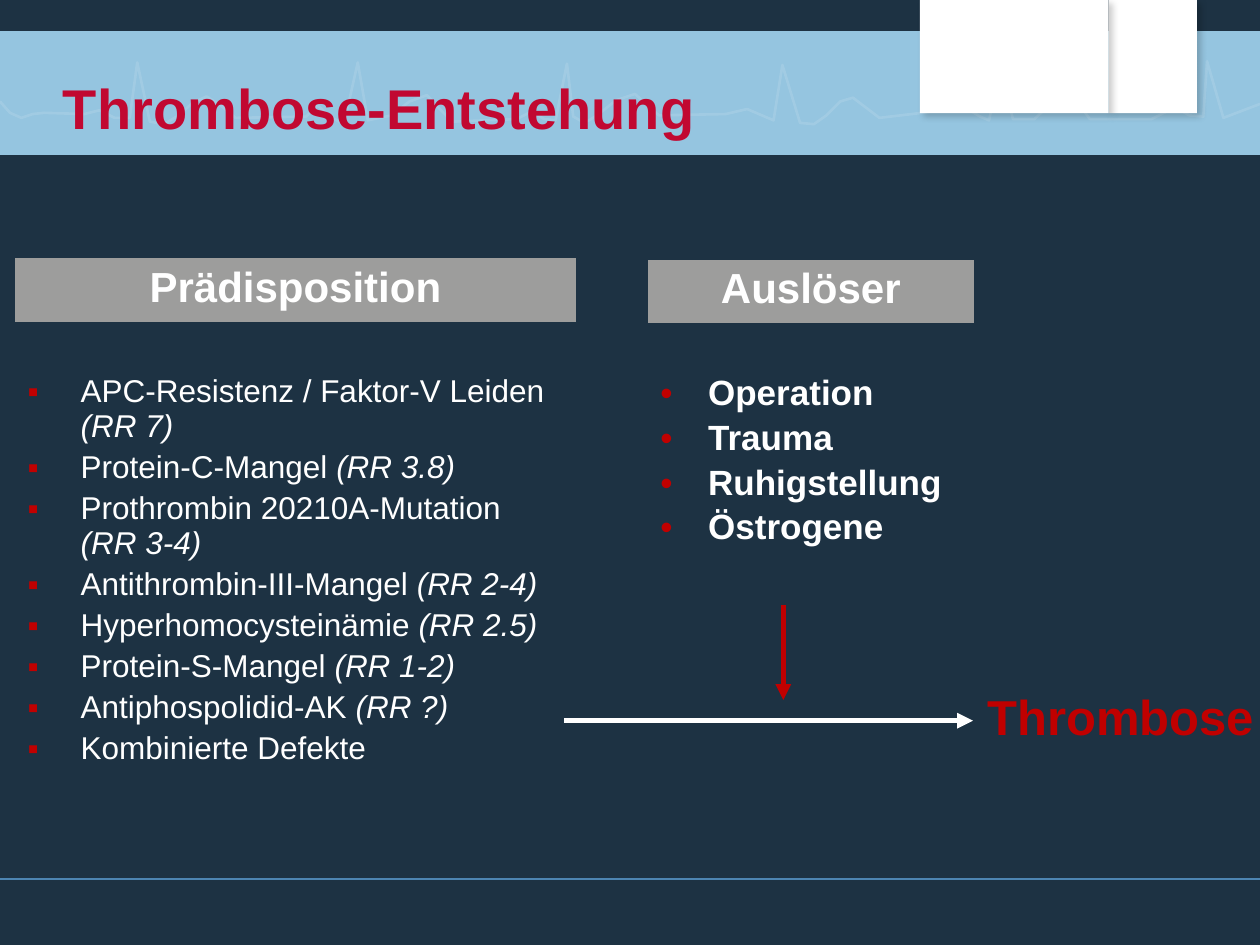
from lxml.etree import SubElement as Sub
from pptx import Presentation
from pptx.dml.color import RGBColor as RGB
from pptx.enum.shapes import MSO_CONNECTOR as Conn, MSO_SHAPE as Kind
from pptx.enum.text import MSO_ANCHOR as Anchor, PP_ALIGN as Align
from pptx.oxml.ns import qn
from pptx.util import Inches, Pt

WIDE, HIGH = Inches(10), Inches(7.5)
NAVY = RGB(0x1D, 0x32, 0x43)
SKY = RGB(0x95, 0xC5, 0xE0)
PALE = RGB(0xBF, 0xDC, 0xEC)
BLUE = RGB(0x4D, 0x85, 0xB2)
CRIMSON = RGB(0xC1, 0x08, 0x31)
RED = RGB(0xC0, 0x00, 0x00)
GREY = RGB(0x9D, 0x9D, 0x9C)
WHITE = RGB(0xFF, 0xFF, 0xFF)
PLAIN = "{2D5ABB26-0587-4C30-8999-92F81FD0307C}"

PULSE = [
    (0, 56), (8, 65), (17, 69), (26, 66), (35, 65), (67, 66), (79, 63),
    (91, 69), (103, 69), (109, 25), (119, 72), (130, 74), (142, 67),
    (153, 57), (164, 52), (175, 59), (187, 69), (243, 68), (252, 59),
    (262, 68), (273, 74), (284, 25), (292, 71), (311, 67), (325, 56),
    (339, 51), (348, 61), (359, 72), (410, 70), (422, 64), (432, 70),
    (441, 71), (450, 26), (455, 68), (464, 73), (474, 67), (489, 55),
    (504, 50), (523, 67), (576, 66), (593, 62), (614, 71), (621, 27),
    (635, 73), (646, 74), (656, 67), (667, 56), (677, 53), (698, 69),
    (766, 61), (778, 68), (785, 71), (794, 29), (804, 70), (821, 70),
    (836, 56), (849, 49), (857, 59), (865, 70), (914, 70), (924, 65),
    (933, 61), (944, 67), (955, 68), (958, 24), (971, 69), (1000, 58),
]
RISKS = [
    ("APC-Resistenz / Faktor-V Leiden ", "(RR 7)"),
    ("Protein-C-Mangel ", "(RR 3.8)"),
    ("Prothrombin 20210A-Mutation ", "(RR 3-4)"),
    ("Antithrombin-III-Mangel ", "(RR 2-4)"),
    ("Hyperhomocysteinämie ", "(RR 2.5)"),
    ("Protein-S-Mangel ", "(RR 1-2)"),
    ("Antiphospolidid-AK ", "(RR ?)"),
    ("Kombinierte Defekte", ""),
]
CAUSES = [(name, "") for name in
          ("Operation", "Trauma", "Ruhigstellung", "Östrogene")]


def part(box, x, y, w, h):
    """Return the part of a box given by shares of its size."""
    left, top, wide, high = box
    return (int(left + x * wide), int(top + y * high),
            int(w * wide), int(h * high))


def style(para, size, color, bold=True):
    """Set the font of a paragraph."""
    font = para.font
    font.name, font.size, font.bold = "Arial", Pt(size), bold
    font.color.rgb = color


def panel(slide, box, fill):
    """Add a plain filled rectangle."""
    shape = slide.shapes.add_shape(Kind.RECTANGLE, *box)
    shape.fill.solid()
    shape.fill.fore_color.rgb = fill
    shape.line.fill.background()
    shape.shadow.inherit = False
    return shape


def card(slide, box):
    """Add a white card with a soft shadow."""
    shape = panel(slide, box, WHITE)
    glow = Sub(shape.element.spPr.find(qn("a:effectLst")), qn("a:outerShdw"),
               blurRad="50800", dist="38100", dir="2700000")
    tint = Sub(glow, qn("a:srgbClr"), val="000000")
    Sub(tint, qn("a:alpha"), val="20000")


def label(slide, box, text, size, color, align, pad=None):
    """Add a text box with one bold line."""
    frame = slide.shapes.add_textbox(*box).text_frame
    frame.word_wrap = True
    if pad is not None:
        frame.margin_left = frame.margin_right = pad
        frame.margin_top = frame.margin_bottom = pad
        frame.vertical_anchor = Anchor.MIDDLE
    para = frame.paragraphs[0]
    para.text, para.alignment = text, align
    style(para, size, color)


def rule(slide, box, color, width, head=True):
    """Add a line across a box, with an arrowhead if wanted."""
    x, y, w, h = box
    line = slide.shapes.add_connector(Conn.STRAIGHT, x, y, x + w, y + h)
    line.line.color.rgb, line.line.width = color, Pt(width)
    if head:
        Sub(line.line._get_or_add_ln(), qn("a:tailEnd"), type="triangle")
    Sub(line.element.spPr, qn("a:effectLst"))


def pulse(slide, box):
    """Draw the faint heartbeat across a band."""
    pen = slide.shapes.build_freeform(*PULSE[0], scale=box[2] / 1000)
    pen.add_line_segments(PULSE[1:], close=False)
    wave = pen.convert_to_shape(box[0], box[1])
    wave.fill.background()
    wave.shadow.inherit = False
    wave.line.color.rgb, wave.line.width = PALE, Pt(1.5)
    tint = wave.line._get_or_add_ln().find(".//" + qn("a:srgbClr"))
    Sub(tint, qn("a:alpha"), val="30000")


def header(slide, box):
    """Place the band, the cards and the title."""
    band = part(box, 0, 0.2, 1, 0.8)
    panel(slide, band, SKY)
    pulse(slide, band)
    card(slide, part(box, 0.88, 0, 0.07, 0.73))
    card(slide, part(box, 0.73, 0, 0.15, 0.73))
    label(slide, part(box, 0.05, 0.47, 0.82, 0.44), "Thrombose-Entstehung",
          32, CRIMSON, Align.LEFT, 0)


def bullet(para, mark, dent):
    """Give a paragraph a red hanging bullet."""
    prop = para._p.get_or_add_pPr()
    prop.set("marL", str(dent))
    prop.set("indent", str(-dent))
    Sub(Sub(prop, qn("a:buClr")), qn("a:srgbClr"), val=str(RED))
    Sub(prop, qn("a:buFont"), typeface="Arial")
    Sub(prop, qn("a:buChar"), char=mark)


def column(slide, box, share, title, items, mark, dent, size, bold):
    """Place a table with a grey head and a list below it."""
    frame = slide.shapes.add_table(2, 1, *box)
    table = frame.table
    table.first_row = table.horz_banding = False
    table._tbl.tblPr.find(qn("a:tableStyleId")).text = PLAIN
    for row, ratio in zip(table.rows, (share, 1 - share)):
        row.height = int(box[3] * ratio)
    head, body = table.cell(0, 0), table.cell(1, 0)
    head.fill.solid()
    head.fill.fore_color.rgb = GREY
    para = head.text_frame.paragraphs[0]
    para.text, para.alignment = title, Align.CENTER
    style(para, 24, WHITE)
    body.fill.background()
    body.margin_top = Inches(0.41)
    text = body.text_frame
    for rank, (name, risk) in enumerate(items):
        para = text.add_paragraph() if rank else text.paragraphs[0]
        bullet(para, mark, dent)
        if rank:
            para.space_before = Pt(3.2)
        style(para, size, WHITE, bold)
        para.add_run().text = name
        if risk:
            run = para.add_run()
            run.text, run.font.italic = risk, True


def flow(slide, box):
    """Place the two arrows and the outcome."""
    rule(slide, part(box, 0, 0.78, 0.56, 0), WHITE, 3)
    rule(slide, part(box, 0.3, 0, 0, 0.64), RED, 3)
    label(slide, part(box, 0.525, 0.51, 0.475, 0.49), "Thrombose", 28, RED,
          Align.CENTER)


def main():
    """Build and save the slide."""
    deck = Presentation()
    deck.slide_width, deck.slide_height = WIDE, HIGH
    slide = deck.slides.add_slide(deck.slide_layouts[6])
    slide.background.fill.solid()
    slide.background.fill.fore_color.rgb = NAVY
    page = (0, 0, WIDE, HIGH)
    header(slide, (0, 0, WIDE, Inches(1.23)))
    rule(slide, part(page, 0, 0.93, 1, 0), BLUE, 1, False)
    column(slide, (Inches(0.12), Inches(2.05), Inches(4.45), Inches(4.42)),
           0.115, "Prädisposition", RISKS, "▪", Inches(0.42), 18, False)
    column(slide, (Inches(5.14), Inches(2.06), Inches(2.59), Inches(2.53)),
           0.186, "Auslöser", CAUSES, "•", Inches(0.38), 20, True)
    flow(slide, (Inches(4.48), Inches(4.8), Inches(5.79), Inches(1.18)))
    deck.save("out.pptx")


if __name__ == "__main__":
    main()
